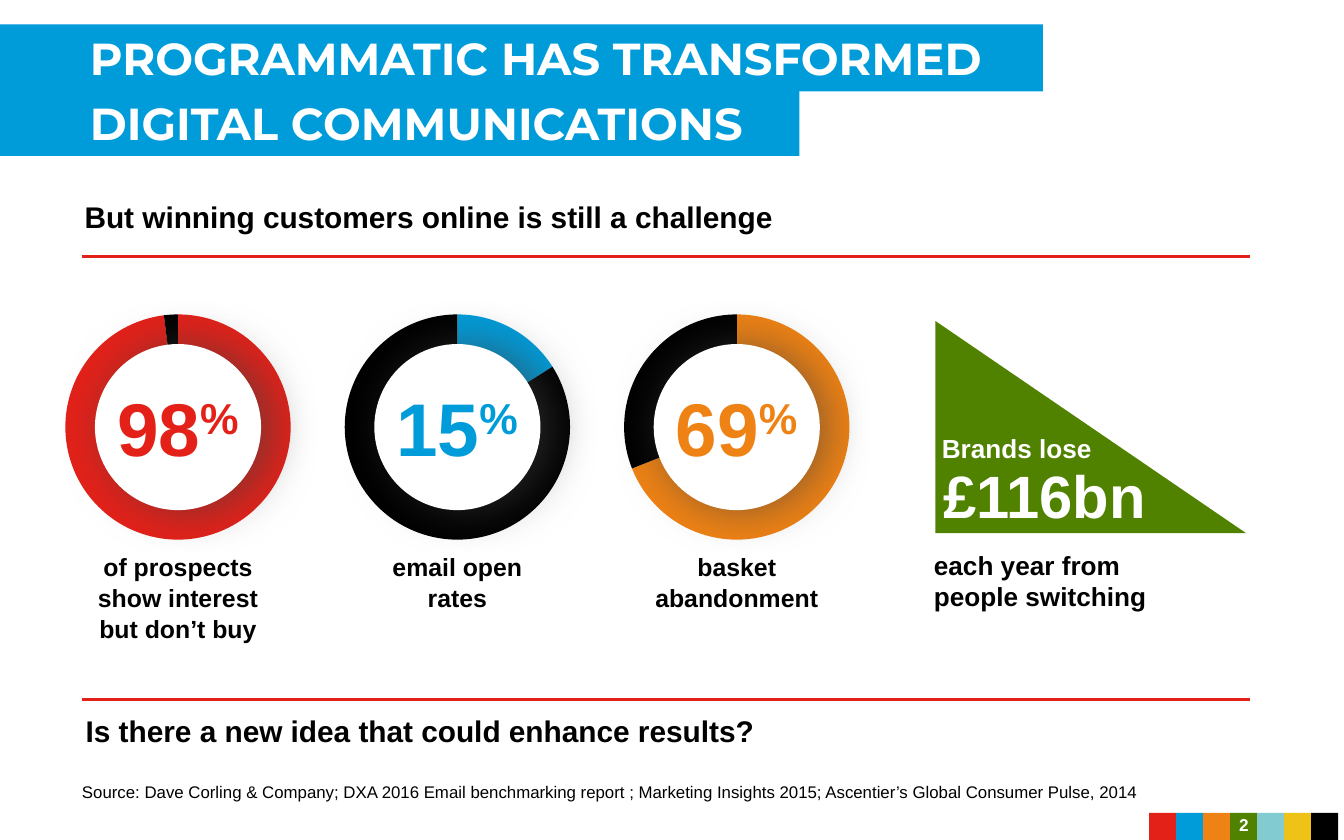
import lxml.etree
import pptx
import pptx.chart.data
import pptx.dml.color
import pptx.enum.chart
import pptx.enum.shapes
import pptx.enum.text
import pptx.oxml
import pptx.oxml.ns
import pptx.util

Cm = pptx.util.Cm
Pt = pptx.util.Pt
qn = pptx.oxml.ns.qn
Shape = pptx.enum.shapes.MSO_SHAPE
Align = pptx.enum.text.PP_ALIGN
Anchor = pptx.enum.text.MSO_ANCHOR

HUES = {
    "red": "E32119", "blue": "009CDA", "orange": "EF8214", "green": "508200",
    "teal": "82CBD0", "yellow": "EEC216", "black": "000000", "white": "FFFFFF",
}
SHADE = "404040"


def rgb(hue):
    return pptx.dml.color.RGBColor.from_string(HUES[hue])


def style(frame, size, hue, bold=True, font="Arial", align=Align.LEFT):
    for para in frame.paragraphs:
        para.alignment = align
        for run in para.runs:
            run.font.size = Pt(size)
            run.font.bold = bold
            run.font.name = font
            run.font.color.rgb = rgb(hue)


def label(slide, box, text, size, hue="black", anchor=Anchor.TOP,
          wrap=True, **look):
    frame = slide.shapes.add_textbox(*map(Cm, box)).text_frame
    frame.word_wrap = wrap
    frame.vertical_anchor = anchor
    frame.text = text
    style(frame, size, hue, **look)
    return frame


def block(slide, kind, box, hue):
    shape = slide.shapes.add_shape(kind, *map(Cm, box))
    shape.shadow.inherit = False
    shape.fill.solid()
    shape.fill.fore_color.rgb = rgb(hue)
    shape.line.fill.background()
    return shape


def rule(slide, left, top, width):
    line = slide.shapes.add_connector(
        pptx.enum.shapes.MSO_CONNECTOR.STRAIGHT,
        Cm(left), Cm(top), Cm(left + width), Cm(top))
    line.line.color.rgb = rgb("red")
    line.line.width = Pt(1.5)
    lxml.etree.SubElement(line._element.spPr, qn("a:effectLst"))


def banner(slide, left, top):
    """Two stacked title bars, the first being the slide's title."""
    first = slide.shapes.title
    first.left, first.top, first.width, first.height = map(
        Cm, (left, top, 19.71, 1.27))
    first.fill.solid()
    first.fill.fore_color.rgb = rgb("blue")
    second = block(slide, Shape.RECTANGLE, (left, top + 1.22, 15.11, 1.27), "blue")
    lines = ("PROGRAMMATIC HAS TRANSFORMED", "DIGITAL COMMUNICATIONS")
    for bar, text in zip((first, second), lines):
        frame = bar.text_frame
        frame.text = text
        frame.word_wrap = False
        frame.auto_size = pptx.enum.text.MSO_AUTO_SIZE.NONE
        frame.vertical_anchor = Anchor.MIDDLE
        frame.margin_left = Cm(1.7)
        style(frame, 24, "white", font="Montserrat")


def ring(slide, box, share, hue):
    """Doughnut chart whose ring is 4.26 cm across, centred in the box."""
    data = pptx.chart.data.CategoryChartData()
    data.categories = ["1", "2"]
    data.add_series("Series 1", (share, 100 - share))
    chart = slide.shapes.add_chart(
        pptx.enum.chart.XL_CHART_TYPE.DOUGHNUT, *map(Cm, box), data).chart
    chart.has_legend = False
    chart.has_title = False
    chart.font.name = "Arial"
    chart.font.size = Pt(18)
    chart.font.color.rgb = rgb("black")
    plot = chart.plots[0]
    plot.vary_by_categories = False
    for i, tone in enumerate((hue, "black")):
        part = plot.series[0].points[i].format
        part.fill.solid()
        part.fill.fore_color.rgb = rgb(tone)
        part.line.fill.background()

    area = chart._chartSpace.find(".//" + qn("c:plotArea"))
    area.find(".//" + qn("c:holeSize")).set("val", "76")
    for old in area.findall(qn("c:layout")):
        area.remove(old)
    layout = lxml.etree.Element(qn("c:layout"))
    manual = lxml.etree.SubElement(layout, qn("c:manualLayout"))
    wide, high = 4.26 / box[2], 4.26 / box[3]
    for tag, val in (("layoutTarget", "inner"), ("xMode", "edge"),
                     ("yMode", "edge"), ("x", (1 - wide) / 2),
                     ("y", (1 - high) / 2), ("w", wide), ("h", high)):
        lxml.etree.SubElement(manual, qn("c:" + tag)).set("val", str(val))
    area.insert(0, layout)


def glow(shape, dist):
    """Soft shadow that falls from the hole onto the ring."""
    effect = shape._element.spPr.find(qn("a:effectLst"))
    cast = lxml.etree.SubElement(
        effect, qn("a:outerShdw"), blurRad=str(Pt(25)), dist=str(Pt(dist)),
        dir="0", algn="ctr", rotWithShape="0")
    tone = lxml.etree.SubElement(cast, qn("a:srgbClr"), val=SHADE)
    lxml.etree.SubElement(tone, qn("a:alpha"), val="60000")


def gauge(slide, left, top, share, shown, hue, text, dist):
    wide, high = 5.65, 4.95
    mid, half = left + wide / 2, top + high / 2
    ring(slide, (left, top, wide, high), share, hue)
    hole = block(slide, Shape.OVAL, (mid - 1.57, half - 1.57, 3.14, 3.14), "white")
    glow(hole, dist)
    frame = label(slide, (mid - 1.48, half - 0.98, 2.95, 1.96), shown, 40, hue,
                  Anchor.MIDDLE, wrap=False, align=Align.CENTER)
    sign = frame.paragraphs[0].add_run()
    sign.text = "%"
    style(frame, 40, hue, align=Align.CENTER)
    sign.font._element.set("baseline", "30000")
    note = label(slide, (mid - 2.02, top + 4.67, 4.04, 1.95), text, 13.3,
                 align=Align.CENTER)
    note.paragraphs[0].line_spacing = 1.05


def loss(slide, left, top):
    block(slide, Shape.RIGHT_TRIANGLE, (left, top, 5.87, 4.01), "green")
    label(slide, (left - 0.13, top + 1.8, 4.11, 1.19), "Brands lose", 14, "white",
          Anchor.MIDDLE)
    label(slide, (left - 0.1, top + 2.44, 4.98, 1.7), "£116bn", 32, "white",
          Anchor.MIDDLE)
    label(slide, (left - 0.28, top + 4.19, 5.28, 1.9),
          "each year from people switching", 14)


def footer(slide, left, top):
    side = 0.51
    hues = ("red", "blue", "orange", "green", "teal", "yellow", "black")
    for i, hue in enumerate(hues):
        block(slide, Shape.RECTANGLE, (left + i * side, top, side, side), hue)
    label(slide, (left + 1.09, top - 0.2, 1.4, 0.84), "2", 9.2, "white",
          Anchor.MIDDLE, align=Align.CENTER)


def main():
    deck = pptx.Presentation()
    deck.slide_width, deck.slide_height = Cm(25.4), Cm(15.88)
    slide = deck.slides.add_slide(deck.slide_layouts[5])

    banner(slide, 0, 0.46)
    label(slide, (1.35, 3.63, 22.17, 1.07),
          "But winning customers online is still a challenge", 16)
    gauges = (
        (98, "98", "red", "of prospects show interest but don’t buy", 6),
        (16, "15", "blue", "email open rates", 6),
        (69, "69", "orange", "basket abandonment", 3),
    )
    for i, item in enumerate(gauges):
        gauge(slide, 0.54 + 5.28 * i, 5.6, *item)
    loss(slide, 17.68, 6.07)
    label(slide, (1.37, 13.26, 13.26, 1.09),
          "Is there a new idea that could enhance results?", 16,
          anchor=Anchor.MIDDLE)
    for top in (4.85, 13.23):
        rule(slide, 1.55, top, 22.07)
    label(slide, (1.3, 14.68, 20.8, 0.61),
          "Source: Dave Corling & Company; DXA 2016 Email benchmarking report ; "
          "Marketing Insights 2015; Ascentier’s Global Consumer Pulse, 2014",
          9, anchor=Anchor.BOTTOM, bold=False)
    footer(slide, 21.72, 15.37)
    deck.save("out.pptx")


if __name__ == "__main__":
    main()
